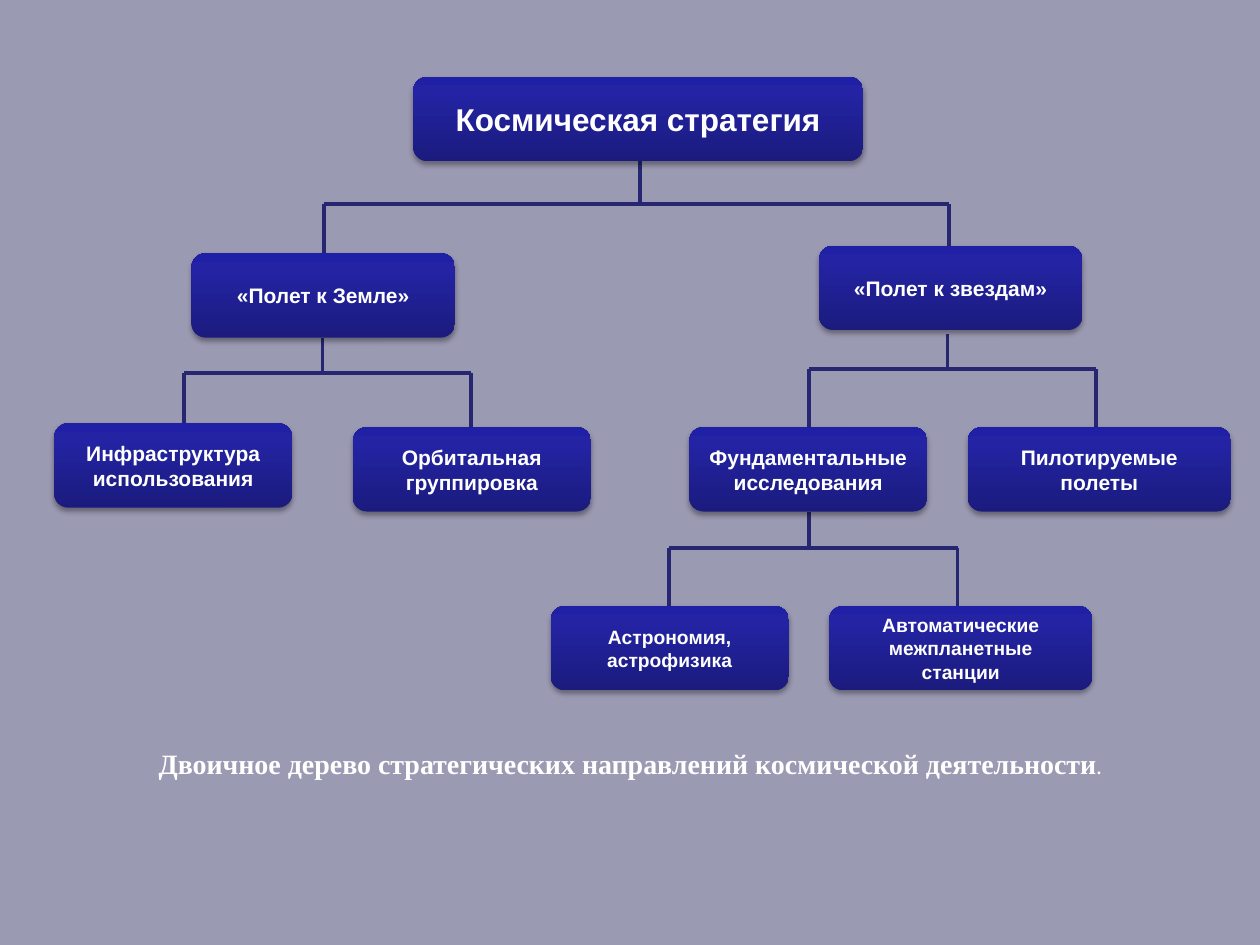
from lxml.etree import SubElement
from pptx import Presentation
from pptx.dml.color import RGBColor
from pptx.enum.shapes import MSO_CONNECTOR, MSO_SHAPE
from pptx.enum.text import MSO_ANCHOR, PP_ALIGN
from pptx.oxml.ns import qn
from pptx.util import Inches, Pt

COLORS = {"background": "9B9AB3", "line": "262671", "text": "FFFFFF", "shadow": "000000"}
GRADIENT = [(0, "1B1B7E"), (80, "2323A3"), (100, "2020A6")]  # bottom to top
SLIDE_WIDTH, SLIDE_HEIGHT = 10, 7.5
BOX_HEIGHT = 0.67
NARROW, WIDE, ROOT = 1.89, 2.09, 3.57

# left, top, width, text size, lines
NODES = [
    (3.28, 0.61, ROOT, 18, ["Космическая стратегия"]),
    (1.52, 2.01, WIDE, 12, ["«Полет к Земле»"]),
    (6.50, 1.95, WIDE, 12, ["«Полет к звездам»"]),
    (0.43, 3.36, NARROW, 12, ["Инфраструктура", "использования"]),
    (2.80, 3.39, NARROW, 12, ["Орбитальная", "группировка"]),
    (5.47, 3.39, NARROW, 12, ["Фундаментальные", "исследования"]),
    (7.68, 3.39, WIDE, 12, ["Пилотируемые", "полеты"]),
    (4.37, 4.81, NARROW, 11, ["Астрономия,", "астрофизика"]),
    (6.58, 4.81, WIDE, 11, ["Автоматические", "межпланетные", "станции"]),
]
# stem x, stem top, bar y, then x and bottom of the left and right drops
BRANCHES = [
    (5.08, 1.26, 1.62, (2.57, 2.01), (7.53, 1.96)),
    (2.56, 2.68, 2.96, (1.46, 3.36), (3.74, 3.39)),
    (7.52, 2.65, 2.93, (6.42, 3.39), (8.70, 3.39)),
    (6.42, 4.06, 4.35, (5.31, 4.81), (7.60, 4.81)),
]
CAPTION = [
    ("Двоичное дерево стратегических направлений космической деятельности", 16),
    (".", 10),
]


def color(name):
    return RGBColor.from_string(COLORS[name])


def style_font(font, name, size=None):
    font.name, font.bold = name, True
    font.color.rgb = color("text")
    if size:
        font.size = Pt(size)


def add_line(page, x1, y1, x2, y2):
    line = page.shapes.add_connector(
        MSO_CONNECTOR.STRAIGHT, Inches(x1), Inches(y1), Inches(x2), Inches(y2))
    line.line.color.rgb = color("line")
    line.line.width = Pt(2)
    SubElement(line._element.spPr, qn("a:effectLst"))


def add_branch(page, stem_x, stem_top, bar_y, left, right):
    add_line(page, stem_x, stem_top, stem_x, bar_y)
    add_line(page, left[0], bar_y, right[0], bar_y)
    for x, bottom in (left, right):
        add_line(page, x, bar_y, x, bottom)


def fill_gradient(box):
    box.fill.gradient()
    box.fill.gradient_angle = 90
    stops = box._element.spPr.find(qn("a:gradFill")).find(qn("a:gsLst"))
    for stop in list(stops):
        stops.remove(stop)
    for percent, value in GRADIENT:
        stop = SubElement(stops, qn("a:gs"), pos=str(percent * 1000))
        SubElement(stop, qn("a:srgbClr"), val=value)


def add_soft_shadow(box):
    box.shadow.inherit = False
    effects = box._element.spPr.find(qn("a:effectLst"))
    shadow = SubElement(effects, qn("a:outerShdw"), blurRad=str(Pt(3.1)),
                        dist=str(Pt(1.8)), dir="5400000", rotWithShape="0")
    tint = SubElement(shadow, qn("a:srgbClr"), val=COLORS["shadow"])
    SubElement(tint, qn("a:alpha"), val="35000")


def add_node(page, left, top, width, size, lines):
    box = page.shapes.add_shape(MSO_SHAPE.ROUNDED_RECTANGLE, Inches(left), Inches(top),
                                Inches(width), Inches(BOX_HEIGHT))
    fill_gradient(box)
    box.line.fill.background()
    add_soft_shadow(box)
    frame = box.text_frame
    frame.margin_left = frame.margin_right = frame.margin_top = frame.margin_bottom = 0
    frame.vertical_anchor = MSO_ANCHOR.MIDDLE
    frame.word_wrap = False
    frame.text = "\n".join(lines)
    for para in frame.paragraphs:
        para.alignment = PP_ALIGN.CENTER
        style_font(para.font, "Arial", size)


def add_caption(page):
    box = page.shapes.add_textbox(0, Inches(5.87), Inches(SLIDE_WIDTH), Inches(0.37))
    frame = box.text_frame
    frame.word_wrap = True
    frame.vertical_anchor = MSO_ANCHOR.MIDDLE
    para = frame.paragraphs[0]
    para.alignment = PP_ALIGN.CENTER
    style_font(para.font, "Times New Roman")
    for text, size in CAPTION:
        span = para.add_run()
        span.text = text
        span.font.size = Pt(size)


def main():
    deck = Presentation()
    deck.slide_width, deck.slide_height = Inches(SLIDE_WIDTH), Inches(SLIDE_HEIGHT)
    page = deck.slides.add_slide(deck.slide_layouts[6])
    page.background.fill.solid()
    page.background.fill.fore_color.rgb = color("background")
    for branch in BRANCHES:
        add_branch(page, *branch)
    for node in NODES:
        add_node(page, *node)
    add_caption(page)
    deck.save("out.pptx")


if __name__ == "__main__":
    main()
